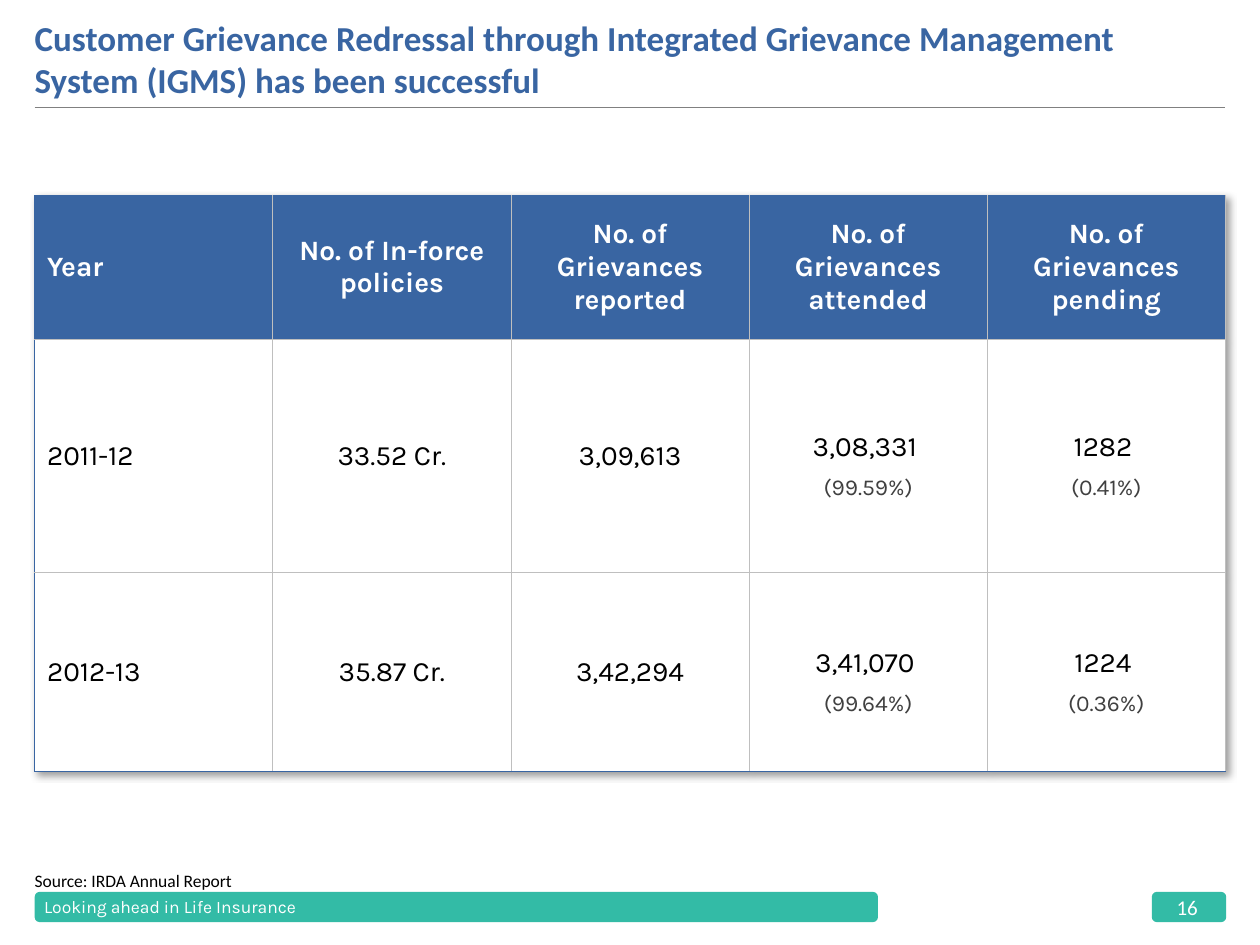
import pptx
import pptx.dml.color
import pptx.enum.shapes
import pptx.enum.text
import pptx.oxml
import pptx.oxml.ns
import pptx.util
from dataclasses import dataclass
from lxml import etree
from pptx.util import Cm


@dataclass(frozen=True)
class Theme:
    blue: str = "3965A2"
    teal: str = "33BBA6"
    grid: str = "BFBFBF"
    rule: str = "808080"
    white: str = "FFFFFF"
    black: str = "000000"
    muted: str = "404040"
    heading: str = "Calibri"
    body: str = "Karla"
    title_size: int = 20
    table_size: int = 16
    percent_size: int = 13
    number_size: int = 12
    small_size: int = 10


theme = Theme()
rgb = pptx.dml.color.RGBColor.from_string
Align = pptx.enum.text.PP_ALIGN
Anchor = pptx.enum.text.MSO_ANCHOR
A = pptx.oxml.ns.nsdecls("a")


def style(para, name, size, color, bold=False):
    para.font.name = name
    para.font.size = pptx.util.Pt(size)
    para.font.color.rgb = rgb(color)
    para.font.bold = bold


def add_border(cell, side, color):
    """Side is L, R, T or B; call in that order, before the cell is filled."""
    cell._tc.get_or_add_tcPr().append(pptx.oxml.parse_xml(
        f'<a:ln{side} {A} w="6350"><a:solidFill><a:srgbClr val="{color}"/>'
        f'</a:solidFill></a:ln{side}>'))


deck = pptx.Presentation()
deck.slide_width, deck.slide_height = Cm(25.4), Cm(19.05)
page = deck.slides.add_slide(deck.slide_layouts[6])
left, width = 0.7, 24

# Footer bars
for bar_left, bar_width in ((left, 17), (23.22, 1.5)):
    bar = page.shapes.add_shape(
        pptx.enum.shapes.MSO_SHAPE.ROUNDED_RECTANGLE,
        Cm(bar_left), Cm(17.98), Cm(bar_width), Cm(0.61))
    bar.shadow.inherit = False
    bar.fill.solid()
    bar.fill.fore_color.rgb = rgb(theme.teal)
    bar.line.fill.background()

# Rule under the title
rule = page.shapes.add_connector(
    pptx.enum.shapes.MSO_CONNECTOR.STRAIGHT,
    Cm(left), Cm(2.16), Cm(left + width), Cm(2.16))
rule.line.color.rgb = rgb(theme.rule)
rule.line.width = pptx.util.Pt(0.5)
etree.SubElement(rule._element.spPr, pptx.oxml.ns.qn("a:effectLst"))

# Title, source, footer text and page number
labels = [
    ("Customer Grievance Redressal through Integrated Grievance Management "
     "System (IGMS) has been successful", (left, 0.23, width, 1.8),
     Anchor.BOTTOM, True, (theme.heading, theme.title_size, theme.blue, True)),
    ("Source: IRDA Annual Report", (left, 17.53, width, 0.43),
     Anchor.BOTTOM, True, (theme.heading, theme.small_size, theme.black)),
    ("Looking ahead in Life Insurance", (0.89, 18.03, 8, 0.51),
     Anchor.MIDDLE, False, (theme.body, theme.small_size, theme.white)),
    ("16", (23.72, 18.03, 0.51, 0.51),
     Anchor.MIDDLE, False, (theme.heading, theme.number_size, theme.white)),
]
for text, place, anchor, wrap, look in labels:
    frame = page.shapes.add_textbox(*map(Cm, place)).text_frame
    frame.margin_left = frame.margin_right = 0
    frame.margin_top = frame.margin_bottom = 0
    frame.word_wrap = wrap
    frame.vertical_anchor = anchor
    frame.text = text
    style(frame.paragraphs[0], *look)

# Grievance table: a second line in a cell is its percentage
rows = [
    ["Year", "No. of In-force policies", "No. of Grievances reported",
     "No. of Grievances attended", "No. of Grievances pending"],
    ["2011-12", "33.52 Cr.", "3,09,613", "3,08,331 \n(99.59%)", "1282 \n(0.41%)"],
    ["2012-13", "35.87 Cr.", "3,42,294", "3,41,070 \n(99.64%)", "1224 \n(0.36%)"],
]
row_heights = [2.9, 4.7, 4.01]
last_row = len(rows) - 1
table = page.shapes.add_table(
    len(rows), len(rows[0]), Cm(left), Cm(3.94), Cm(width), Cm(sum(row_heights))).table
table.horz_banding = False
table._tbl.tblPr.insert(0, pptx.oxml.parse_xml(
    f'<a:effectLst {A}><a:outerShdw blurRad="50800" dist="38100" dir="2700000" '
    'algn="tl" rotWithShape="0"><a:srgbClr val="000000"><a:alpha val="40000"/>'
    '</a:srgbClr></a:outerShdw></a:effectLst>'))
for column in table.columns:
    column.width = Cm(width / len(rows[0]))

for r, (texts, height) in enumerate(zip(rows, row_heights)):
    table.rows[r].height = Cm(height)
    for c, text in enumerate(texts):
        cell = table.cell(r, c)
        add_border(cell, "L", theme.blue if c == 0 else theme.grid)
        add_border(cell, "R", theme.grid)
        add_border(cell, "T", theme.blue if r == 0 else theme.grid)
        add_border(cell, "B", theme.blue if r == last_row else theme.grid)
        cell.fill.solid()
        cell.fill.fore_color.rgb = rgb(theme.blue if r == 0 else theme.white)
        cell.vertical_anchor = Anchor.MIDDLE
        cell.margin_left = cell.margin_right = cell.margin_bottom = Cm(0.25)
        cell.margin_top = Cm(0.66 if "\n" in text else 0.25)
        cell.text = text
        for i, para in enumerate(cell.text_frame.paragraphs):
            para.alignment = Align.LEFT if c == 0 else Align.CENTER
            if i == 0:
                style(para, theme.body, theme.table_size,
                      theme.white if r == 0 else theme.black, r == 0)
            else:
                para.space_before = pptx.util.Pt(6)
                style(para, theme.body, theme.percent_size, theme.muted)

deck.save("out.pptx")
